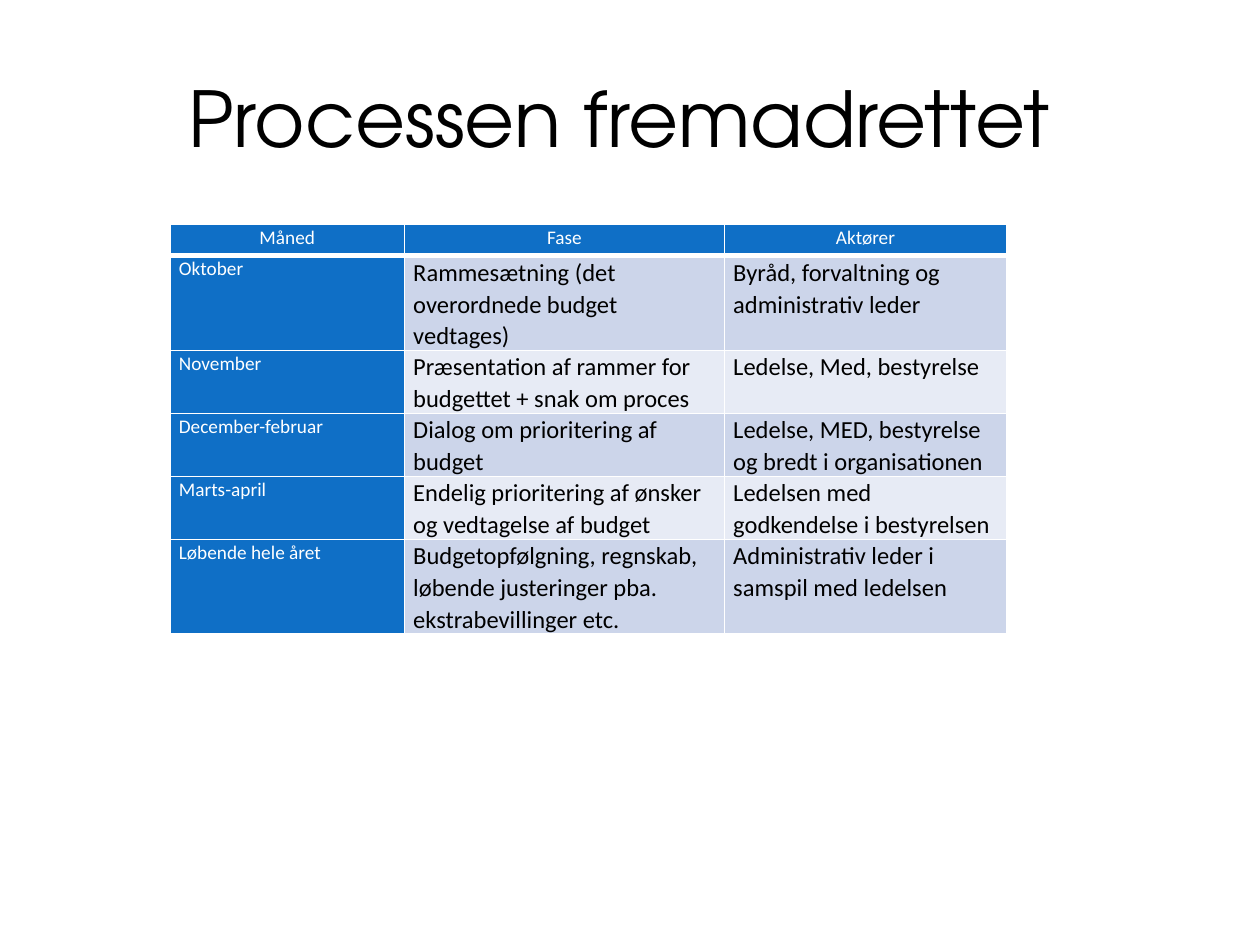
"""Build the slide that shows the budget process as a table of months, phases and actors."""
from dataclasses import dataclass

from lxml.etree import SubElement
from pptx import Presentation
from pptx.dml.color import RGBColor as Color
from pptx.enum.text import MSO_ANCHOR as Anchor, PP_ALIGN as Align
from pptx.oxml.ns import qn
from pptx.util import Inches, Pt


@dataclass(frozen=True)
class Theme:
    title_font: str = "TeX Gyre Adventor"
    body_font: str = "Calibri"
    title_size: int = 44
    label_size: int = 11
    body_size: int = 14
    ink: str = "000000"
    paper: str = "FFFFFF"
    accent: str = "0F6FC6"
    bands: tuple[str, str] = ("CCD5EA", "E7EBF5")
    thin: int = 1
    thick: int = 3


@dataclass(frozen=True)
class Phase:
    month: str
    activity: str
    actors: str
    height: float

    def texts(self) -> tuple[str, str, str]:
        return self.month, self.activity, self.actors


@dataclass(frozen=True)
class Area:
    left: float
    top: float
    width: float
    height: float

    def on(self, deck) -> tuple[int, int, int, int]:
        wide, high = deck.slide_width, deck.slide_height
        return (int(self.left * wide), int(self.top * high),
                int(self.width * wide), int(self.height * high))


THEME = Theme()
TITLE_AREA = Area(0.05, 0.04, 0.9, 1 / 6)
TABLE_AREA = Area(0.135, 0.2373, 0.664, 0.432)
COLUMNS = (1.86, 2.54, 2.24)
ROWS = (
    Phase("Måned", "Fase", "Aktører", 0.25),
    Phase("Oktober", "Rammesætning (det overordnede budget vedtages)",
          "Byråd, forvaltning og administrativ leder", 0.75),
    Phase("November", "Præsentation af rammer for budgettet + snak om proces",
          "Ledelse, Med, bestyrelse", 0.5),
    Phase("December-februar", "Dialog om prioritering af budget",
          "Ledelse, MED, bestyrelse og bredt i organisationen", 0.5),
    Phase("Marts-april", "Endelig prioritering af ønsker og vedtagelse af budget",
          "Ledelsen med godkendelse i bestyrelsen", 0.5),
    Phase("Løbende hele året",
          "Budgetopfølgning, regnskab, løbende justeringer pba. ekstrabevillinger etc.",
          "Administrativ leder i samspil med ledelsen", 0.75),
)


def write(frame, text: str, *, font: str, size: int, color: str,
          align: Align = Align.LEFT, spacing: float = 1.0) -> None:
    para = frame.paragraphs[0]
    para.alignment = align
    para.line_spacing = spacing
    span = para.add_run()
    span.text = text
    span.font.name = font
    span.font.size = Pt(size)
    span.font.color.rgb = Color.from_string(color)


def draw_borders(cell, color: str, **widths: int) -> None:
    properties = cell._tc.get_or_add_tcPr()
    for side, width in widths.items():
        line = SubElement(properties, qn(f"a:ln{side}"), w=str(Pt(width)))
        SubElement(SubElement(line, qn("a:solidFill")), qn("a:srgbClr"), val=color)


def draw_cell(cell, text: str, row: int, column: int) -> None:
    heading = row == 0
    label = heading or column == 0
    cell.margin_left = cell.margin_right = Inches(0.07)
    cell.margin_top = cell.margin_bottom = 0
    draw_borders(cell, THEME.paper, L=THEME.thin, R=THEME.thin,
                 T=THEME.thick if row == 1 else THEME.thin,
                 B=THEME.thick if heading else THEME.thin)
    cell.fill.solid()
    cell.fill.fore_color.rgb = Color.from_string(
        THEME.accent if label else THEME.bands[(row - 1) % 2])
    write(cell.text_frame, text, font=THEME.body_font,
          size=THEME.label_size if label else THEME.body_size,
          color=THEME.paper if label else THEME.ink,
          align=Align.CENTER if heading else Align.LEFT, spacing=1.07)


def draw_title(deck, page, text: str) -> None:
    frame = page.shapes.add_textbox(*TITLE_AREA.on(deck)).text_frame
    frame.word_wrap = True
    frame.vertical_anchor = Anchor.MIDDLE
    write(frame, text, font=THEME.title_font, size=THEME.title_size,
          color=THEME.ink, align=Align.CENTER)


def draw_table(deck, page, rows: tuple[Phase, ...]) -> None:
    table = page.shapes.add_table(len(rows), len(COLUMNS), *TABLE_AREA.on(deck)).table
    for column, width in zip(table.columns, COLUMNS):
        column.width = Inches(width)
    for row, phase in enumerate(rows):
        table.rows[row].height = Inches(phase.height)
        for column, text in enumerate(phase.texts()):
            draw_cell(table.cell(row, column), text, row, column)


def main() -> None:
    deck = Presentation()
    deck.slide_width, deck.slide_height = Inches(10), Inches(7.5)
    page = deck.slides.add_slide(deck.slide_layouts[6])
    draw_title(deck, page, "Processen fremadrettet ")
    draw_table(deck, page, ROWS)
    deck.save("out.pptx")


if __name__ == "__main__":
    main()
